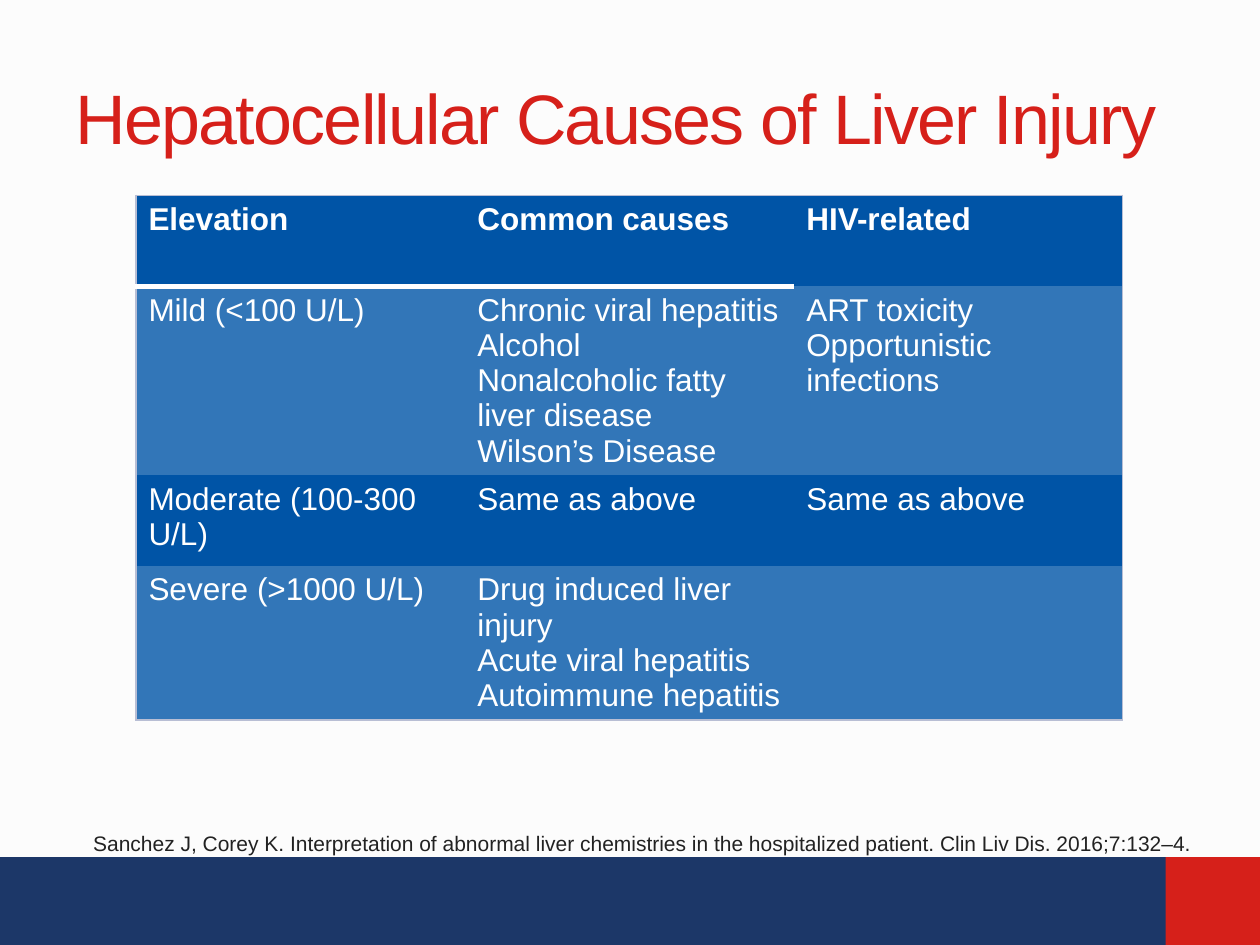
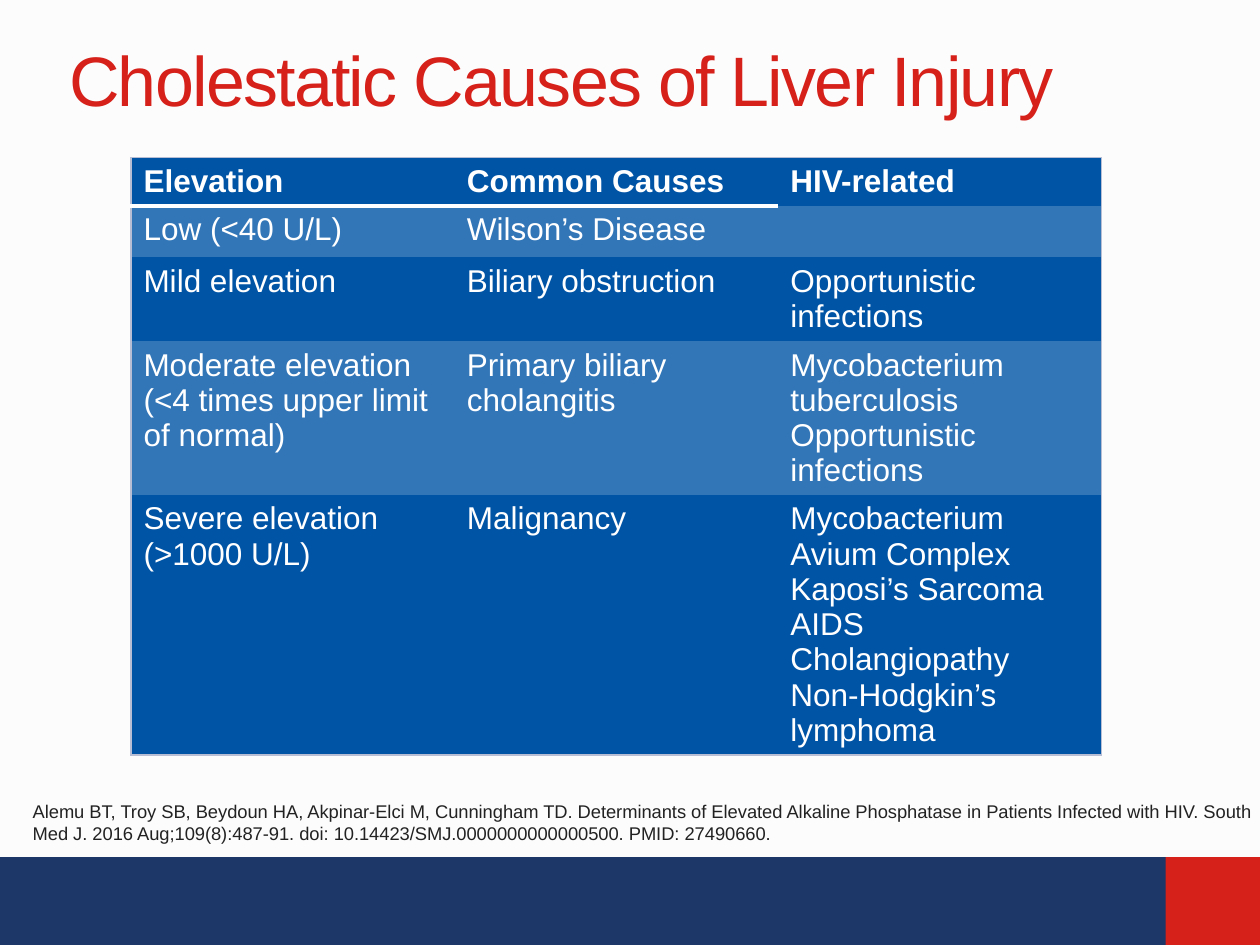
import pptx
import pptx.dml.color
import pptx.enum.shapes
import pptx.enum.text
import pptx.oxml
import pptx.oxml.ns
import pptx.util

Cm = pptx.util.Cm
Pt = pptx.util.Pt
RGBColor = pptx.dml.color.RGBColor

NAVY = RGBColor(0x1C, 0x37, 0x68)
RED = RGBColor(0xD6, 0x20, 0x1A)
PAPER = RGBColor(0xFC, 0xFC, 0xFC)
WHITE = RGBColor(0xFF, 0xFF, 0xFF)
INK = RGBColor(0x22, 0x22, 0x22)
ROW_DARK = RGBColor(0x00, 0x54, 0xA6)
ROW_LIGHT = RGBColor(0x32, 0x76, 0xB8)
FRAME = RGBColor(0xB8, 0xBE, 0xD4)

PLAIN_TABLE_STYLE = "{2D5ABB26-0587-4C30-8999-92F81FD0307C}"
TITLE_FONT = {"name": "Arial", "size": Pt(40), "bold": False}
HEADER_FONT = {"name": "Arial", "size": Pt(18), "bold": True}
CELL_FONT = {"name": "Arial", "size": Pt(18), "bold": False}

BANDS = [(0, 25.4, NAVY), (23.5, 1.9, RED)]

SLIDES = [
    {
        "title": "Hepatocellular Causes of Liver Injury",
        "title_place": (1.27, 0.76, 23.09, 3.18),
        "table_place": (2.74, 3.94),
        "column_width": 6.63,
        "row_heights": [1.83, 3.81, 1.83, 3.1],
        "rows": [
            ["Elevation", "Common causes", "HIV-related"],
            [
                "Mild (<100 U/L)",
                "Chronic viral hepatitis\nAlcohol\nNonalcoholic fatty liver disease\nWilson’s Disease",
                "ART toxicity\nOpportunistic infections",
            ],
            ["Moderate (100-300 U/L)", "Same as above", "Same as above"],
            [
                "Severe (>1000 U/L)",
                "Drug induced liver injury\nAcute viral hepatitis\nAutoimmune hepatitis",
                "",
            ],
        ],
        "citation": "Sanchez J, Corey K. Interpretation of abnormal liver chemistries in the "
        "hospitalized patient. Clin Liv Dis. 2016;7:132–4.",
        "citation_place": (1.63, 16.61, 23.65, 0.76),
        "citation_size": 12,
    },
    {
        "title": "Cholestatic Causes of Liver Injury",
        "title_place": (1.14, 0, 23.09, 3.18),
        "table_place": (2.64, 3.18),
        "column_width": 6.52,
        "row_heights": [0.97, 1.04, 1.69, 3.09, 5.24],
        "rows": [
            ["Elevation", "Common Causes", "HIV-related"],
            ["Low (<40 U/L)", "Wilson’s Disease", ""],
            ["Mild elevation", "Biliary obstruction", "Opportunistic infections"],
            [
                "Moderate elevation (<4 times upper limit of normal)",
                "Primary biliary cholangitis",
                "Mycobacterium tuberculosis\nOpportunistic infections",
            ],
            [
                "Severe elevation (>1000 U/L)",
                "Malignancy",
                "Mycobacterium Avium Complex\nKaposi’s Sarcoma\nAIDS Cholangiopathy\n"
                "Non-Hodgkin’s lymphoma",
            ],
        ],
        "citation": "Alemu BT, Troy SB, Beydoun HA, Akpinar-Elci M, Cunningham TD. Determinants of "
        "Elevated Alkaline Phosphatase in Patients Infected with HIV. South Med J. 2016 "
        "Aug;109(8):487-91. doi: 10.14423/SMJ.0000000000000500. PMID: 27490660.",
        "citation_place": (0.41, 16, 24.99, 1.14),
        "citation_size": 10.5,
    },
]


def write_text(text_frame, text, font_format, color):
    text_frame.text = text
    for paragraph in text_frame.paragraphs:
        paragraph.alignment = pptx.enum.text.PP_ALIGN.LEFT
        for run in paragraph.runs:
            for attribute, value in font_format.items():
                setattr(run.font, attribute, value)
            run.font.color.rgb = color


def add_border(cell, side, color, points):
    cell._tc.get_or_add_tcPr().append(
        pptx.oxml.parse_xml(
            f'<a:{side} {pptx.oxml.ns.nsdecls("a")} w="{Pt(points)}">'
            f'<a:solidFill><a:srgbClr val="{color}"/></a:solidFill></a:{side}>'
        )
    )


presentation = pptx.Presentation()
presentation.slide_width = Cm(25.4)
presentation.slide_height = Cm(19.05)
background = presentation.slide_master.background.fill
background.solid()
background.fore_color.rgb = PAPER
title_only = presentation.slide_layouts[5]

for content in SLIDES:
    slide = presentation.slides.add_slide(title_only)

    for left, width, color in BANDS:
        band = slide.shapes.add_shape(
            pptx.enum.shapes.MSO_SHAPE.RECTANGLE, Cm(left), Cm(17.28), Cm(width), Cm(1.77)
        )
        band.shadow.inherit = False
        band.fill.solid()
        band.fill.fore_color.rgb = color
        band.line.fill.background()

    title = slide.shapes.title
    for attribute, value in zip(("left", "top", "width", "height"), content["title_place"]):
        setattr(title, attribute, Cm(value))
    title.text_frame.vertical_anchor = pptx.enum.text.MSO_ANCHOR.MIDDLE
    write_text(title.text_frame, content["title"], TITLE_FONT, RED)
    title.text_frame.paragraphs[0].runs[0].font._element.set("spc", "-100")

    rows = content["rows"]
    last_row, last_column = len(rows) - 1, len(rows[0]) - 1
    left, top = content["table_place"]
    frame = slide.shapes.add_table(
        len(rows),
        len(rows[0]),
        Cm(left),
        Cm(top),
        Cm(content["column_width"] * len(rows[0])),
        Cm(sum(content["row_heights"])),
    )
    table = frame.table
    table._tbl.tblPr.find(pptx.oxml.ns.qn("a:tableStyleId")).text = PLAIN_TABLE_STYLE
    for column in table.columns:
        column.width = Cm(content["column_width"])
    for row, height in zip(table.rows, content["row_heights"]):
        row.height = Cm(height)

    for row_index, texts in enumerate(rows):
        for column_index, text in enumerate(texts):
            cell = table.cell(row_index, column_index)
            header = row_index == 0
            write_text(cell.text_frame, text, HEADER_FONT if header else CELL_FONT, WHITE)
            if column_index == 0:
                add_border(cell, "lnL", FRAME, 1)
            if column_index == last_column:
                add_border(cell, "lnR", FRAME, 1)
            if header:
                add_border(cell, "lnT", FRAME, 1)
                if column_index < last_column:
                    add_border(cell, "lnB", WHITE, 3)
            elif row_index == last_row:
                add_border(cell, "lnB", FRAME, 1)
            cell.fill.solid()
            cell.fill.fore_color.rgb = ROW_LIGHT if row_index % 2 else ROW_DARK

    citation = slide.shapes.add_textbox(*(Cm(value) for value in content["citation_place"]))
    citation.text_frame.word_wrap = True
    citation.text_frame.margin_right = 0
    citation_font = {"name": "Arial", "size": Pt(content["citation_size"])}
    write_text(citation.text_frame, content["citation"], citation_font, INK)

presentation.save("out.pptx")
